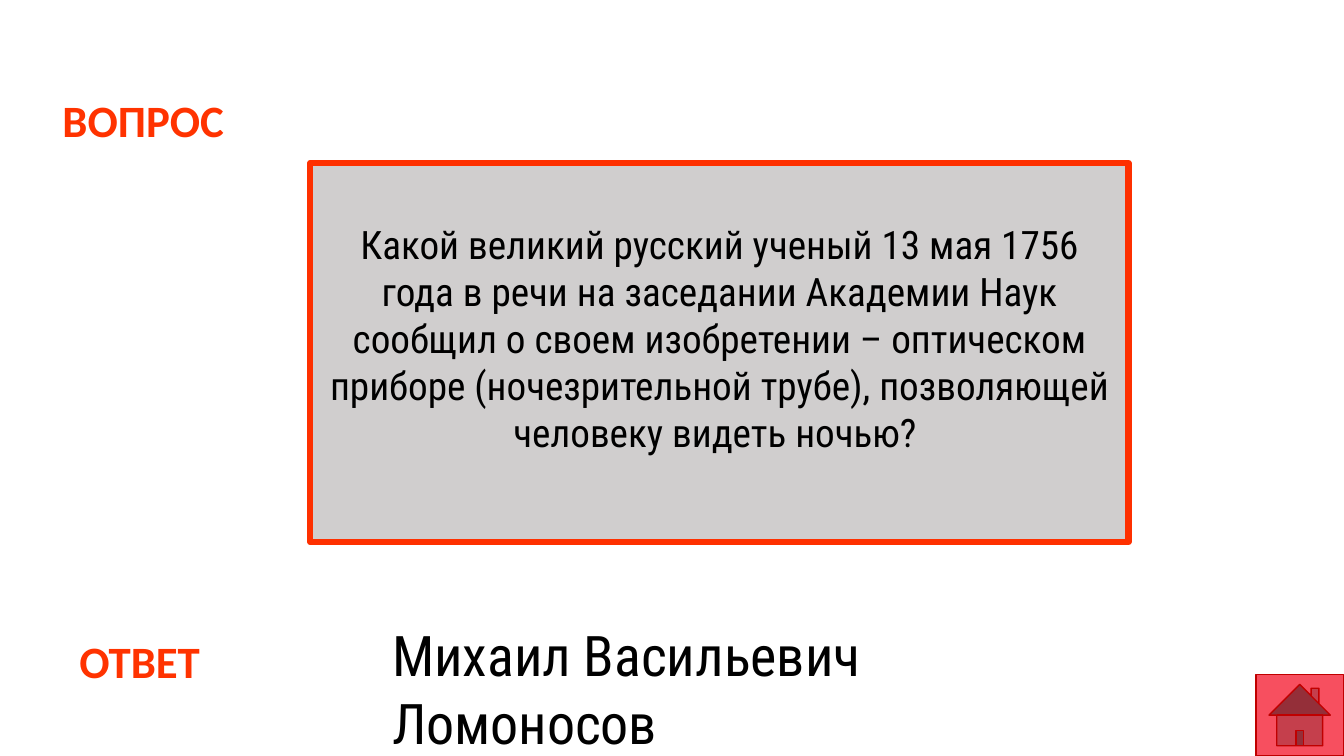
from dataclasses import dataclass

from pptx import Presentation
from pptx.dml.color import RGBColor
from pptx.enum.shapes import MSO_SHAPE
from pptx.enum.text import MSO_ANCHOR, MSO_AUTO_SIZE, PP_ALIGN
from pptx.shapes.autoshape import Shape
from pptx.util import Cm, Pt

RECT = MSO_SHAPE.RECTANGLE
HOME = MSO_SHAPE.ACTION_BUTTON_HOME
TOP, MIDDLE = MSO_ANCHOR.TOP, MSO_ANCHOR.MIDDLE
LEFT, CENTER = PP_ALIGN.LEFT, PP_ALIGN.CENTER
FIXED = MSO_AUTO_SIZE.NONE

COLORS = {
    "label": "FF3300",
    "text": "000000",
    "panel": "D0CECE",
    "frame": "FE3000",
    "home": "F74F5F",
    "edge": "C00000",
}


@dataclass
class Box:
    left: float
    top: float
    width: float
    height: float

    def area(self) -> tuple[Cm, Cm, Cm, Cm]:
        return Cm(self.left), Cm(self.top), Cm(self.width), Cm(self.height)


@dataclass
class Style:
    font: str
    size: int
    color: str
    bold: bool = False
    align: PP_ALIGN = LEFT
    anchor: MSO_ANCHOR = TOP


LABEL = Style("Calibri", 32, "label", bold=True)
QUERY = Style("Roboto Condensed", 28, "text", align=CENTER, anchor=MIDDLE)
REPLY = Style("Roboto Condensed", 40, "text")


def tint(name: str) -> RGBColor:
    return RGBColor.from_string(COLORS[name])


def write(shape: Shape, text: str, style: Style) -> None:
    frame = shape.text_frame
    frame.text = text
    frame.word_wrap = True
    frame.auto_size = FIXED
    frame.vertical_anchor = style.anchor
    line = frame.paragraphs[0]
    line.alignment = style.align
    font = line.runs[0].font
    font.name = style.font
    font.size = Pt(style.size)
    font.bold = style.bold
    font.color.rgb = tint(style.color)


def draw(slide, kind: MSO_SHAPE, box: Box, fill: str, edge: str, width: float) -> Shape:
    shape = slide.shapes.add_shape(kind, *box.area())
    shape.shadow.inherit = False
    shape.fill.solid()
    shape.fill.fore_color.rgb = tint(fill)
    shape.line.color.rgb = tint(edge)
    shape.line.width = Pt(width)
    return shape


def main() -> None:
    deck = Presentation()
    deck.slide_width, deck.slide_height = Cm(33.87), Cm(19.05)
    slide = deck.slides.add_slide(deck.slide_layouts[5])

    title = slide.shapes.title
    title.left, title.top, title.width, title.height = Box(1.32, 2.21, 13.16, 1.63).area()
    write(title, "ВОПРОС", LABEL)

    panel = draw(slide, RECT, Box(7.82, 4.11, 20.62, 9.55), "panel", "frame", 4.5)
    write(
        panel,
        "Какой великий русский ученый 13 мая 1756 года в речи на заседании "
        "Академии Наук сообщил о своем изобретении – оптическом приборе "
        "(ночезрительной трубе), позволяющей человеку видеть ночью? ",
        QUERY,
    )
    panel.text_frame.margin_bottom = Cm(0.88)

    for text, box, style in (
        ("ОТВЕТ", Box(1.75, 15.85, 4.19, 1.63), LABEL),
        ("Михаил Васильевич Ломоносов", Box(9.63, 15.52, 17.7, 1.96), REPLY),
    ):
        write(slide.shapes.add_textbox(*box.area()), text, style)

    draw(slide, HOME, Box(31.65, 16.99, 2.21, 2.06), "home", "edge", 1)
    deck.save("out.pptx")


if __name__ == "__main__":
    main()
